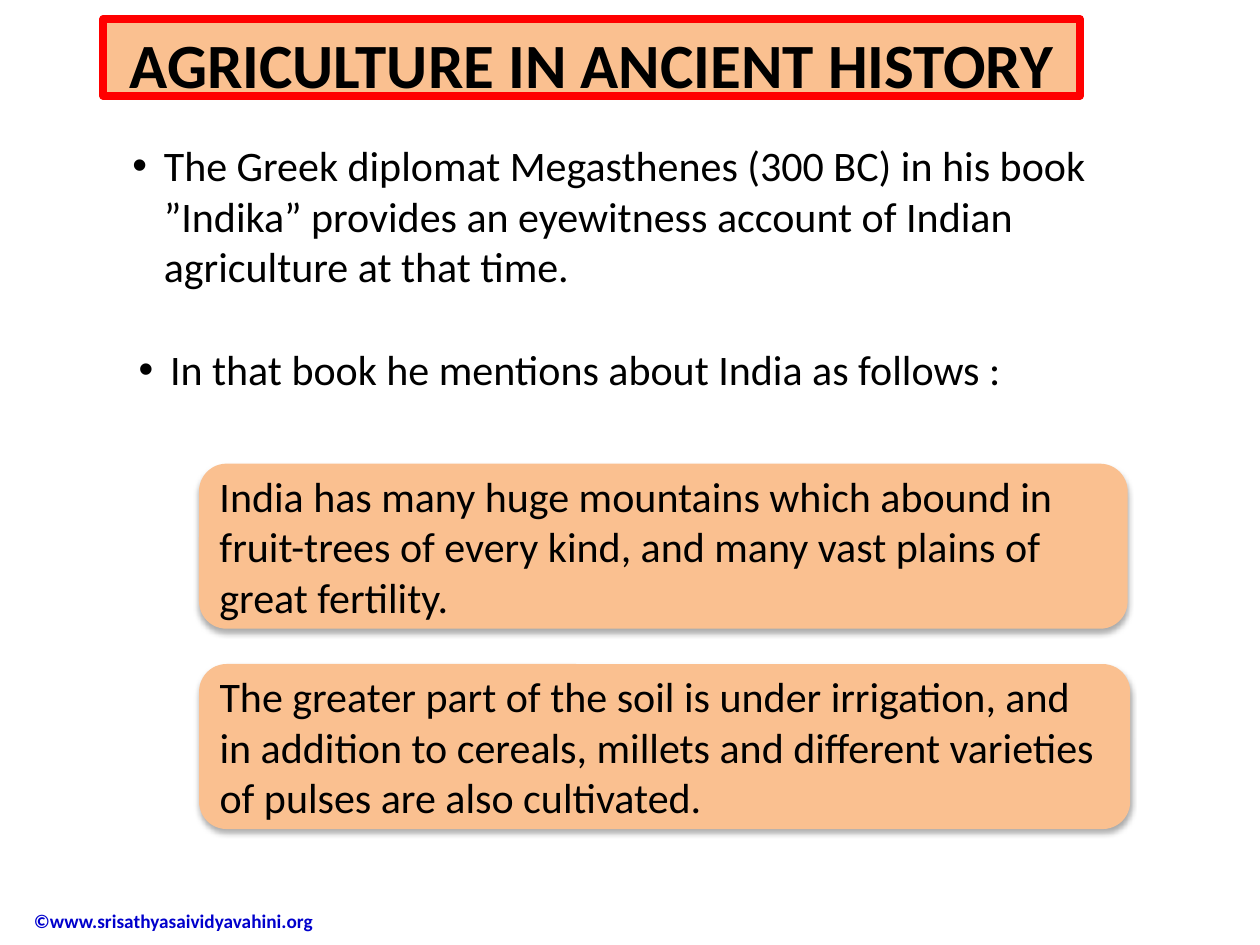
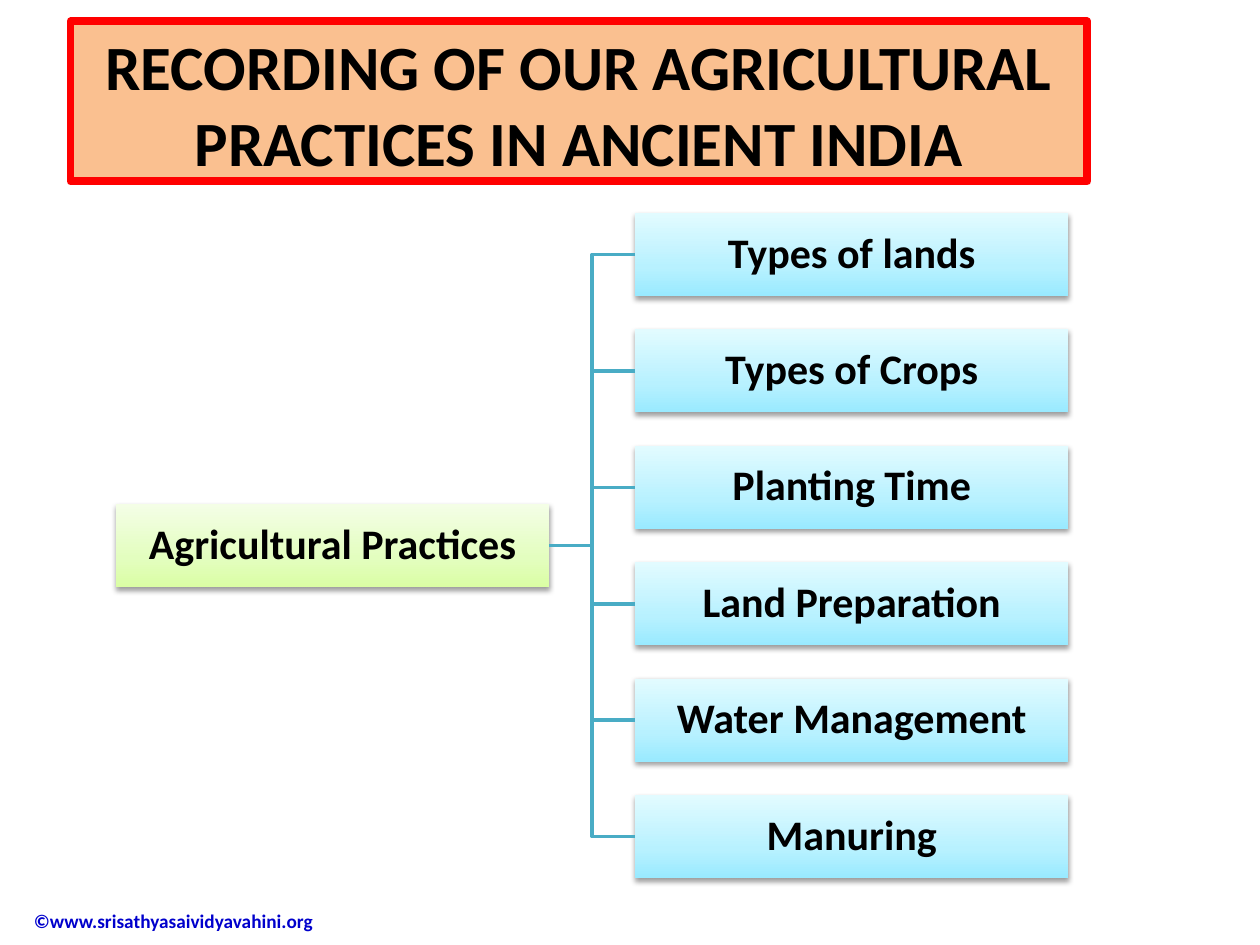
from dataclasses import dataclass

from lxml.etree import SubElement
from pptx import Presentation
from pptx.dml.color import RGBColor
from pptx.enum.shapes import MSO_CONNECTOR, MSO_SHAPE
from pptx.enum.text import MSO_ANCHOR, MSO_AUTO_SIZE, PP_ALIGN
from pptx.oxml import parse_xml
from pptx.oxml.ns import nsdecls, qn
from pptx.util import Inches, Pt

# Shared look
FONT = "Calibri"
BLACK = "000000"
PEACH = "FAC090"
RED = "FF0000"
FOOTER_BLUE = "0000CC"
BRANCH_TEAL = "49ACC5"
GREEN_STOPS = ("DAFEA4", "E3FEBF", "F4FEE6")
BLUE_STOPS = ("99EAFF", "B8F1FF", "E2FBFF")
FOOTER = "©www.srisathyasaividyavahini.org"
TITLE_ONLY, TITLE_AND_BODY = 5, 1


@dataclass(frozen=True)
class Area:
    left: float
    top: float
    width: float
    height: float

    def lengths(self) -> tuple:
        return tuple(Inches(v) for v in (self.left, self.top, self.width, self.height))


@dataclass(frozen=True)
class Shadow:
    opacity: int
    blur: float
    distance: float


@dataclass(frozen=True)
class Bullet:
    text: str
    indent: float
    gap_before: float


@dataclass(frozen=True)
class Quote:
    text: str
    area: Area


QUOTE_SHADOW = Shadow(32, 3.5, 2.2)
NODE_SHADOW = Shadow(38, 3.1, 1.6)

# Slide content
BULLETS = (
    Bullet("The Greek diplomat Megasthenes (300 BC) in his book ”Indika” provides "
           "an eyewitness account of Indian agriculture at that time.", 0.25, 0),
    Bullet("In that book he mentions about India as follows :", 0.3, 30),
)
QUOTES = (
    Quote("India has many huge mountains which abound in fruit-trees of every kind, "
          "and many vast plains of great fertility.", Area(1.58, 3.68, 7.37, 1.31)),
    Quote("The greater part of the soil is under irrigation, and in addition to cereals, "
          "millets and different varieties of pulses are also cultivated.",
          Area(1.58, 5.27, 7.39, 1.31)),
)
PRACTICES = ("Types of lands", "Types of Crops", "Planting Time",
             "Land Preparation", "Water Management", "Manuring")

# Tree measures
NODE_WIDTH, NODE_HEIGHT = 3.44, 0.66
ROOT_LEFT, BRANCH_LEFT = 0.92, 5.04
FIRST_TOP, ROW_STEP = 1.69, 0.924


def color(value: str) -> RGBColor:
    return RGBColor.from_string(value)


def format_para(para, size: float, bold: bool = False, ink: str = BLACK,
                align: PP_ALIGN = PP_ALIGN.LEFT) -> None:
    para.alignment = align
    for span in para.runs:
        span.font.name = FONT
        span.font.size = Pt(size)
        span.font.bold = bold
        span.font.color.rgb = color(ink)


def set_frame(frame, anchor: MSO_ANCHOR, margin: float | None = None) -> None:
    frame.word_wrap = True
    frame.auto_size = MSO_AUTO_SIZE.NONE
    frame.vertical_anchor = anchor
    if margin is not None:
        frame.margin_left = frame.margin_right = Inches(margin)
        frame.margin_top = frame.margin_bottom = Inches(margin)


def place(shape, area: Area) -> None:
    shape.left, shape.top, shape.width, shape.height = area.lengths()


def add_shadow(shape, shadow: Shadow) -> None:
    shape.shadow.inherit = False
    effects = shape.element.spPr.find(qn("a:effectLst"))
    effects.append(parse_xml(
        f'<a:outerShdw {nsdecls("a")} blurRad="{Pt(shadow.blur)}" '
        f'dist="{Pt(shadow.distance)}" dir="5400000" rotWithShape="0">'
        f'<a:srgbClr val="{BLACK}"><a:alpha val="{shadow.opacity * 1000}"/></a:srgbClr>'
        f'</a:outerShdw>'))


def fill_gradient(shape, stops: tuple[str, ...]) -> None:
    """Blend upwards through three colours."""
    shape.fill.gradient()
    gradient = shape.element.spPr.find(qn("a:gradFill"))
    marks = "".join(f'<a:gs pos="{at * 1000}"><a:srgbClr val="{stop}"/></a:gs>'
                    for at, stop in zip((0, 35, 100), stops))
    gradient.getparent().replace(gradient, parse_xml(
        f'<a:gradFill {nsdecls("a")} rotWithShape="1"><a:gsLst>{marks}</a:gsLst>'
        f'<a:lin ang="16200000" scaled="0"/></a:gradFill>'))


def start_page(deck, layout: int, title: str, area: Area):
    """Add a page with the framed title and the footer."""
    page = deck.slides.add_slide(deck.slide_layouts[layout])
    heading = page.shapes.title
    place(heading, area)
    heading.fill.solid()
    heading.fill.fore_color.rgb = color(PEACH)
    heading.line.color.rgb = color(RED)
    heading.line.width = Pt(4.5)
    heading.text_frame.text = title
    set_frame(heading.text_frame, MSO_ANCHOR.TOP)
    format_para(heading.text_frame.paragraphs[0], 36, True, align=PP_ALIGN.CENTER)

    footer = page.shapes.add_textbox(*Area(0.17, 7.1, 2.52, 0.41).lengths())
    footer.text_frame.text = FOOTER
    set_frame(footer.text_frame, MSO_ANCHOR.MIDDLE)
    format_para(footer.text_frame.paragraphs[0], 11, True, FOOTER_BLUE)
    return page


def add_bullets(body, bullets: tuple[Bullet, ...]) -> None:
    frame = body.text_frame
    frame.text = "\n".join(bullet.text for bullet in bullets)
    set_frame(frame, MSO_ANCHOR.TOP)
    for para, bullet in zip(frame.paragraphs, bullets):
        para.space_before = Pt(bullet.gap_before)
        properties = para._p.get_or_add_pPr()
        properties.set("marL", str(Inches(bullet.indent)))
        properties.set("indent", str(-Inches(0.25)))
        SubElement(properties, qn("a:buFont")).set("typeface", "Arial")
        SubElement(properties, qn("a:buChar")).set("char", "•")
        format_para(para, 24)


def add_quote(page, quote: Quote) -> None:
    box = page.shapes.add_shape(MSO_SHAPE.ROUNDED_RECTANGLE, *quote.area.lengths())
    box.fill.solid()
    box.fill.fore_color.rgb = color(PEACH)
    box.line.fill.background()
    add_shadow(box, QUOTE_SHADOW)
    box.text_frame.text = quote.text
    set_frame(box.text_frame, MSO_ANCHOR.MIDDLE)
    format_para(box.text_frame.paragraphs[0], 24)


def add_node(page, text: str, left: float, top: float, stops: tuple[str, ...]):
    area = Area(left, top, NODE_WIDTH, NODE_HEIGHT)
    node = page.shapes.add_shape(MSO_SHAPE.RECTANGLE, *area.lengths())
    fill_gradient(node, stops)
    node.line.fill.background()
    add_shadow(node, NODE_SHADOW)
    node.text_frame.text = text
    set_frame(node.text_frame, MSO_ANCHOR.MIDDLE, 0.02)
    para = node.text_frame.paragraphs[0]
    para.line_spacing = 0.9
    format_para(para, 24, True, align=PP_ALIGN.CENTER)
    return node


def join_nodes(page, root, branch) -> None:
    link = page.shapes.add_connector(MSO_CONNECTOR.ELBOW, 0, 0, 0, 0)
    link.begin_connect(root, 3)
    link.end_connect(branch, 1)
    link.line.color.rgb = color(BRANCH_TEAL)
    link.line.width = Pt(2)
    SubElement(link.element.spPr, qn("a:effectLst"))


def build_history_page(deck) -> None:
    page = start_page(deck, TITLE_AND_BODY, "AGRICULTURE IN ANCIENT HISTORY",
                      Area(0.82, 0.15, 7.75, 0.61))
    body = page.placeholders[1]
    place(body, Area(0.95, 1.06, 7.81, 2.2))
    add_bullets(body, BULLETS)
    for quote in QUOTES:
        add_quote(page, quote)


def build_practices_page(deck) -> None:
    page = start_page(deck, TITLE_ONLY,
                      "RECORDING OF OUR AGRICULTURAL PRACTICES IN ANCIENT INDIA",
                      Area(0.56, 0.17, 8.07, 1.27))
    # The root sits level with the middle of the branches
    root_top = FIRST_TOP + ROW_STEP * (len(PRACTICES) - 1) / 2
    root = add_node(page, "Agricultural Practices", ROOT_LEFT, root_top, GREEN_STOPS)
    for row, practice in enumerate(PRACTICES):
        branch = add_node(page, practice, BRANCH_LEFT, FIRST_TOP + row * ROW_STEP, BLUE_STOPS)
        join_nodes(page, root, branch)


def main() -> None:
    deck = Presentation()
    deck.slide_width, deck.slide_height = Inches(10), Inches(7.5)
    build_history_page(deck)
    build_practices_page(deck)
    deck.save("out.pptx")


if __name__ == "__main__":
    main()
